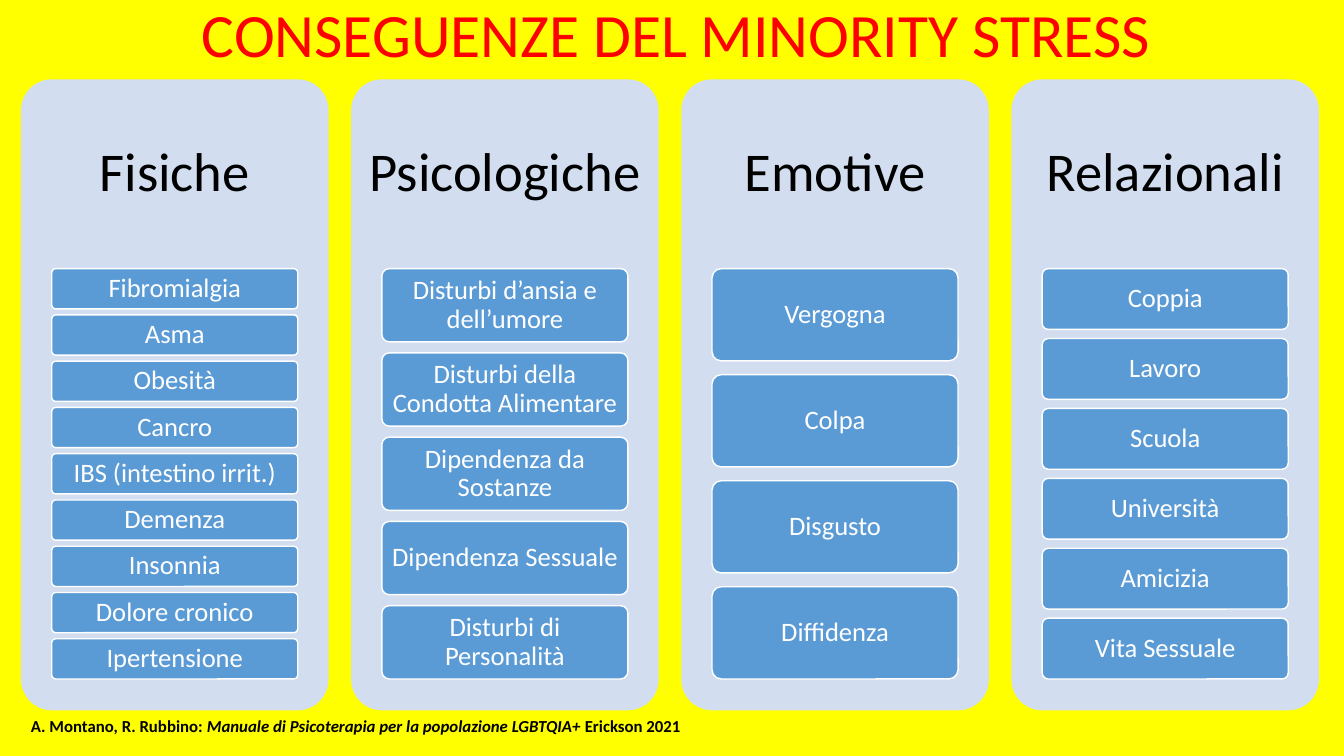
from pptx import Presentation
from pptx.dml.color import RGBColor
from pptx.enum import shapes, text
from pptx.util import Cm, Pt

# Content
TITLE = "CONSEGUENZE DEL MINORITY STRESS"
SOURCE = [
    ("A. Montano, R. Rubbino: ", False),
    ("Manuale di Psicoterapia per la popolazione LGBTQIA+ ", True),
    ("Erickson 2021", False),
]
CONSEQUENCES = {
    "Fisiche": ["Fibromialgia", "Asma", "Obesità", "Cancro", "IBS (intestino irrit.)",
                "Demenza", "Insonnia", "Dolore cronico", "Ipertensione"],
    "Psicologiche": ["Disturbi d’ansia e dell’umore", "Disturbi della Condotta Alimentare",
                     "Dipendenza da Sostanze", "Dipendenza Sessuale",
                     "Disturbi di Personalità"],
    "Emotive": ["Vergogna", "Colpa", "Disgusto", "Diffidenza"],
    "Relazionali": ["Coppia", "Lavoro", "Scuola", "Università", "Amicizia", "Vita Sessuale"],
}
COLORS = {"background": "FFFF00", "title": "FF0000", "panel": "D2DEEF",
          "box": "5B9BD5", "white": "FFFFFF", "black": "000000"}

# Measures in centimetres
PANEL_LEFT, PANEL_TOP, PANEL_WIDTH, PANEL_HEIGHT = 0.53, 2, 7.75, 15.9
PANEL_STEP = 8.32
HEADING_HEIGHT = 4.77
BOX_WIDTH = 6.2
STACK_HEIGHT = 10.34
GAP_RATIO = 0.15  # gap between boxes, as a share of box height

# Formats
TITLE_FONT = {"size": Pt(44), "color": "title"}
SOURCE_FONT = {"size": Pt(12), "color": "black", "bold": True}
HEADING_FONT = {"size": Pt(39), "color": "black"}
BOX_FONT = {"size": Pt(19), "color": "white"}
BOX_MARGINS = {"margin_left": Cm(0.12), "margin_right": Cm(0.12),
               "margin_top": Cm(0.1), "margin_bottom": Cm(0.1)}
HEADING_MARGINS = {"margin_left": Cm(0.1), "margin_right": Cm(0.1),
                   "margin_top": 0, "margin_bottom": Cm(PANEL_HEIGHT - HEADING_HEIGHT)}


def color(name):
    return RGBColor.from_string(COLORS[name])


def apply(target, values):
    for name, value in values.items():
        setattr(target, name, value)


def add_run(paragraph, words, font, italic=False):
    run = paragraph.add_run()
    run.text = words
    values = {"name": "Calibri", "italic": italic, **font}
    run.font.color.rgb = color(values.pop("color"))
    apply(run.font, values)


def add_text(slide, left, top, width, height, runs, font, alignment):
    frame = slide.shapes.add_textbox(Cm(left), Cm(top), Cm(width), Cm(height)).text_frame
    frame.word_wrap = True
    paragraph = frame.paragraphs[0]
    paragraph.alignment = alignment
    for words, italic in runs:
        add_run(paragraph, words, font, italic)


def add_card(slide, left, top, width, height, fill, words, font, margins):
    shape = slide.shapes.add_shape(shapes.MSO_SHAPE.ROUNDED_RECTANGLE,
                                   Cm(left), Cm(top), Cm(width), Cm(height))
    shape.adjustments[0] = 0.1
    shape.shadow.inherit = False
    shape.fill.solid()
    shape.fill.fore_color.rgb = color(fill)
    apply(shape.text_frame, {"word_wrap": True,
                             "vertical_anchor": text.MSO_ANCHOR.MIDDLE, **margins})
    paragraph = shape.text_frame.paragraphs[0]
    apply(paragraph, {"alignment": text.PP_ALIGN.CENTER, "line_spacing": 0.9})
    add_run(paragraph, words, font)
    return shape


def add_column(slide, left, heading, items):
    panel = add_card(slide, left, PANEL_TOP, PANEL_WIDTH, PANEL_HEIGHT,
                     "panel", heading, HEADING_FONT, HEADING_MARGINS)
    panel.line.fill.background()
    # Boxes share the same stack height, however many there are
    count = len(items)
    box_height = STACK_HEIGHT / (count + GAP_RATIO * (count - 1))
    box_left = left + (PANEL_WIDTH - BOX_WIDTH) / 2
    for row, item in enumerate(items):
        top = PANEL_TOP + HEADING_HEIGHT + row * box_height * (1 + GAP_RATIO)
        box = add_card(slide, box_left, top, BOX_WIDTH, box_height,
                       "box", item, BOX_FONT, BOX_MARGINS)
        box.line.color.rgb = color("white")
        box.line.width = Pt(1)


def main():
    presentation = Presentation()
    apply(presentation, {"slide_width": Cm(33.87), "slide_height": Cm(19.05)})
    slide = presentation.slides.add_slide(presentation.slide_layouts[6])
    slide.background.fill.solid()
    slide.background.fill.fore_color.rgb = color("background")

    # Title and source line
    add_text(slide, 0.25, -0.23, 33.6, 2.14, [(TITLE, False)], TITLE_FONT,
             text.PP_ALIGN.CENTER)
    add_text(slide, 0.53, 17.9, 33.3, 0.77, SOURCE, SOURCE_FONT, text.PP_ALIGN.LEFT)

    # Columns
    for index, (heading, items) in enumerate(CONSEQUENCES.items()):
        add_column(slide, PANEL_LEFT + index * PANEL_STEP, heading, items)

    presentation.save("out.pptx")


if __name__ == "__main__":
    main()
